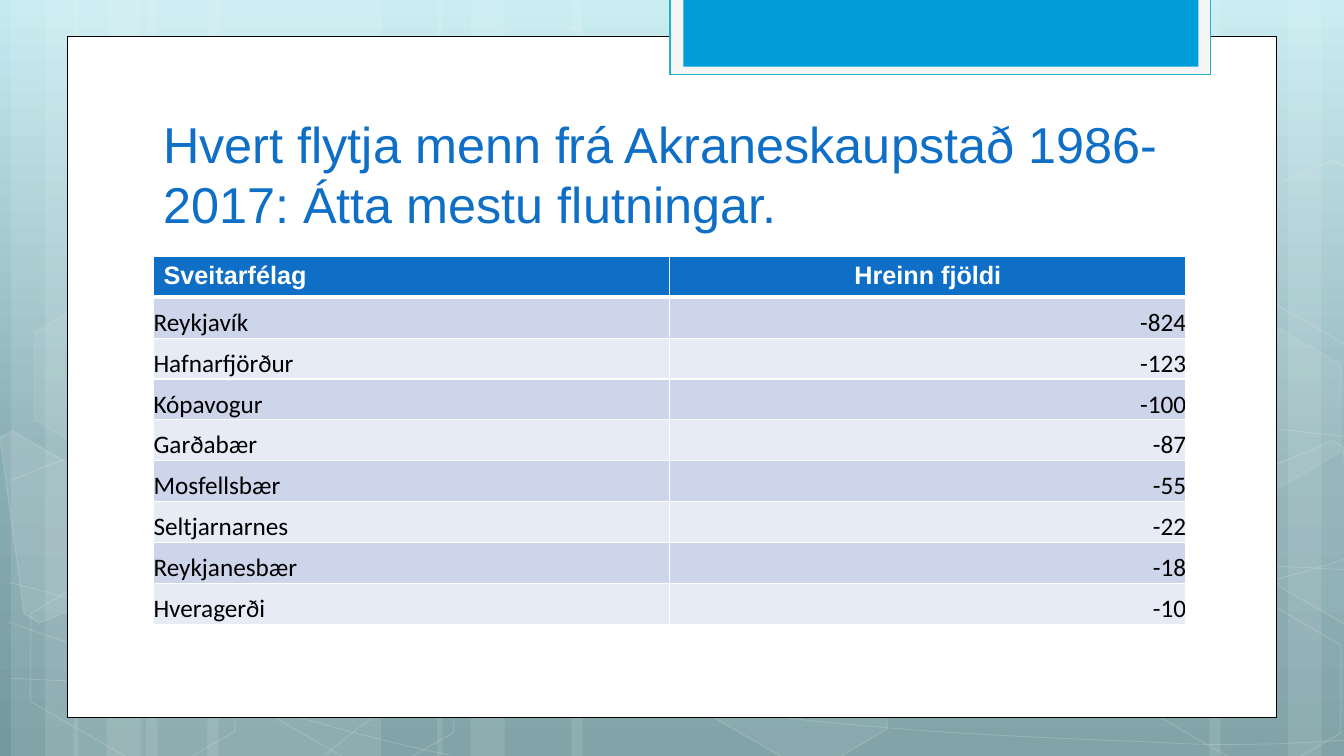
"""Builds a slide with a table of net migration from Akraneskaupstaður."""
from copy import deepcopy

from lxml.etree import SubElement
from pptx import Presentation
from pptx.dml.color import RGBColor
from pptx.enum.shapes import MSO_SHAPE
from pptx.enum.text import MSO_ANCHOR, MSO_AUTO_SIZE, PP_ALIGN
from pptx.oxml.ns import qn
from pptx.util import Cm, Pt

TITLE = "Hvert flytja menn frá Akraneskaupstað 1986-2017: Átta mestu flutningar."
HEADER = ("Sveitarfélag", "Hreinn fjöldi")
ROWS = [
    ("Reykjavík", -824),
    ("Hafnarfjörður", -123),
    ("Kópavogur", -100),
    ("Garðabær", -87),
    ("Mosfellsbær", -55),
    ("Seltjarnarnes", -22),
    ("Reykjanesbær", -18),
    ("Hveragerði", -10),
]
COLORS = {
    "white": "FFFFFF", "black": "000000", "title": "0F6FC6",
    "band_dark": "CCD5EA", "band_light": "E7EBF5",
    "tab": "F5F5F5", "tab_line": "21B2C9", "tab_inner": "009DD9",
}
GRADIENT = [(0, "C4EBF1"), (0.62, "88ADB3"), (1, "749AA0")]
WIDTH, HEIGHT = 33.87, 19.05

STRIPES = [
    (3.68, 5.92), (0.28, 1.7), (1.14, 2.82), (5.23, 5.92), (1.85, 1.7),
    (2.69, 2.82), (24.84, 5.92), (32.46, 1.7), (30.48, 2.82), (14.4, 10.44),
    (11.02, 1.7), (11.86, 2.82),
]
CURVES = [
    [(0.25, 17.09), (1.83, 17.17), (3.66, 17.25), (6.45, 17.22), (8.99, 17.2),
     (12.12, 17.15), (15.49, 16.89), (18.9, 16.64), (23.7, 16.15), (26.8, 15.67),
     (29.92, 15.19), (33.1, 14.43), (34.11, 14)],
    [(0.25, 12.12), (1.22, 11.71), (2.18, 11.33), (4.11, 10.95), (6.05, 10.57),
     (8.76, 10.01), (11.76, 9.83), (14.78, 9.65), (18.42, 9.63), (22.15, 9.83),
     (25.88, 10.03), (32.08, 10.82), (34.11, 11.02)],
    [(0.2, 15.67), (4.29, 17.07), (8.38, 18.47), (11.33, 19.02)],
    [(0.25, 14.68), (1.3, 14.96), (2.36, 15.24), (4.34, 15.65), (6.3, 16.03),
     (9.25, 16.66), (12.07, 17.09), (14.88, 17.53), (18.47, 17.98), (21.26, 18.24),
     (24.08, 18.52), (27.08, 18.62), (28.88, 18.69), (30.66, 18.8), (31.12, 18.75),
     (32, 18.75), (32.87, 18.72), (33.5, 18.67), (34.11, 18.64)],
    [(8.2, 19.02), (8.81, 18.52), (9.4, 18.01), (10.24, 17.55), (11.05, 17.09),
     (12.19, 16.59), (13.13, 16.23), (14.07, 15.88), (14.66, 15.72), (15.9, 15.47),
     (17.15, 15.21), (19.43, 14.86), (20.6, 14.68), (21.79, 14.5), (21.97, 14.5),
     (23.04, 14.45), (24.08, 14.38), (25.73, 14.3), (26.9, 14.27), (28.07, 14.25),
     (30.02, 14.27), (30.02, 14.27), (30.02, 14.27), (32.26, 14.27), (32.26, 14.27),
     (32.89, 14.3), (33.45, 14.33), (33.76, 14.35), (34.06, 14.38), (33.96, 14.35),
     (34.06, 14.38)],
]
HEXAGONS = [
    (11.3, 0.91, 4, 8), (16.81, 14.96, 6, 12), (0.38, 15.01, 0, 12),
    (0.48, 7.92, 7, 8), (5.89, 15.04, 0, 12), (28.24, 15.06, 0, 12),
    (28.24, 7.98, 7, 8),
]
EDGE_HEXAGONS = [
    ([(0, 11.02), (0.33, 10.87), (2.92, 12.37), (3.23, 14.76), (0.99, 15.7),
      (0.61, 15.47)], 10),
    ([(31.37, 12.04), (33.6, 11.1), (33.83, 11.25), (34.47, 15.88),
      (34.26, 15.95), (31.67, 14.45)], 4),
    ([(31.37, 4.98), (33.6, 4.04), (33.88, 4.19), (34.47, 8.79),
      (34.26, 8.89), (31.67, 7.39)], 0),
]
PANELS = [
    ((1.7, 0.91, 30.47, 17.18), dict(fill="white", line="black", width=0.5)),
    ((16.89, -0.05, 13.62, 1.93), dict(fill="tab", line="tab_line", width=1.25)),
    ((17.22, -0.05, 12.98, 1.73), dict(fill="tab_inner")),
]
TITLE_BOX = (3.86, 2.84, 26.01, 3.18)
TABLE_LEFT, TABLE_TOP, COL_W, ROW_H = 3.87, 6.46, 13.01, 1.03


def rgb(name):
    return RGBColor.from_string(COLORS[name])


def set_color(fill, name, alpha, parent):
    fill.solid()
    fill.fore_color.rgb = rgb(name)
    if alpha < 100:
        clr = parent.find(qn("a:solidFill")).find(qn("a:srgbClr"))
        SubElement(clr, qn("a:alpha"), val=str(alpha * 1000))


def paint(sp, fill=None, alpha=100, line=None, width=1, line_alpha=100):
    sp.shadow.inherit = False
    spPr = sp._element.spPr
    if fill and alpha:
        set_color(sp.fill, fill, alpha, spPr)
    else:
        sp.fill.background()
    if line:
        sp.line.width = Pt(width)
        set_color(sp.line.fill, line, line_alpha, spPr.find(qn("a:ln")))
    else:
        sp.line.fill.background()


def add_preset(s, kind, box, **style):
    sp = s.shapes.add_shape(kind, *map(Cm, box))
    paint(sp, **style)
    return sp


def add_outline(s, points, close, **style):
    pts = [(Cm(x), Cm(y)) for x, y in points]
    fb = s.shapes.build_freeform(*pts[0])
    fb.add_line_segments(pts[1:], close=close)
    sp = fb.convert_to_shape()
    paint(sp, **style)
    return sp


def bend(sp):
    outline = next(sp._element.iter(qn("a:pathLst")))[0]
    segments = outline.findall(qn("a:lnTo"))
    for i in range(0, len(segments), 3):
        curve = SubElement(outline, qn("a:cubicBezTo"))
        for segment in segments[i:i + 3]:
            curve.append(segment[0])
            outline.remove(segment)


def write(tf, text, size=18, font="Calibri", color="black", bold=False,
          align=PP_ALIGN.LEFT):
    p = tf.paragraphs[0]
    p.alignment = align
    r = p.add_run()
    r.text = text
    r.font.size, r.font.name, r.font.bold = Pt(size), font, bold
    r.font.color.rgb = rgb(color)


def add_background(s):
    fill = s.background.fill
    fill.gradient()
    fill.gradient_angle = 270
    gs_lst = next(s._element.iter(qn("a:gsLst")))
    gs_lst.append(deepcopy(gs_lst[0]))
    for stop, (pos, color) in zip(fill.gradient_stops, GRADIENT):
        stop.position = pos
        stop.color.rgb = RGBColor.from_string(color)
    for left, width in STRIPES:
        add_preset(s, MSO_SHAPE.RECTANGLE, (left, 0, width, HEIGHT), fill="white", alpha=10)
    for points in CURVES:
        bend(add_outline(s, points, False, line="white", width=0.5, line_alpha=20))
    for left, top, alpha, line_alpha in HEXAGONS:
        sp = add_preset(s, MSO_SHAPE.HEXAGON, (left, top, 5.94, 3.86), fill="white",
                        alpha=alpha, line="white", line_alpha=line_alpha)
        sp.adjustments[0] = 0.285
        sp.rotation = 30
    for points, alpha in EDGE_HEXAGONS:
        add_outline(s, points, True, fill="white", alpha=alpha, line="white", line_alpha=12)
    for box, style in PANELS:
        add_preset(s, MSO_SHAPE.RECTANGLE, box, **style)


def add_title(s):
    title = s.shapes.title
    s.shapes._spTree.append(title._element)
    title.left, title.top, title.width, title.height = map(Cm, TITLE_BOX)
    tf = title.text_frame
    tf.word_wrap, tf.auto_size = True, MSO_AUTO_SIZE.NONE
    tf.vertical_anchor = MSO_ANCHOR.BOTTOM
    write(tf, TITLE, size=36, font="Arial", color="title")


def add_rule_below(cell):
    tcPr = cell._tc.get_or_add_tcPr()
    ln = SubElement(tcPr, qn("a:lnB"), w=str(Pt(3)))
    SubElement(SubElement(ln, qn("a:solidFill")), qn("a:srgbClr"), val=COLORS["white"])
    tcPr.insert(0, ln)


def add_migration_table(s):
    n = len(ROWS) + 1
    table = s.shapes.add_table(n, 2, Cm(TABLE_LEFT), Cm(TABLE_TOP),
                               Cm(2 * COL_W), Cm(n * ROW_H)).table
    for col in table.columns:
        col.width = Cm(COL_W)
    for i, row in enumerate([HEADER] + ROWS):
        table.rows[i].height = Cm(ROW_H)
        for j, value in enumerate(row):
            cell = table.cell(i, j)
            cell.fill.solid()
            if i == 0:
                cell.fill.fore_color.rgb = rgb("title")
                add_rule_below(cell)
                write(cell.text_frame, value, font="Arial", color="white", bold=True,
                      align=(PP_ALIGN.LEFT, PP_ALIGN.CENTER)[j])
                continue
            cell.fill.fore_color.rgb = rgb("band_dark" if i % 2 else "band_light")
            cell.margin_left = cell.margin_right = cell.margin_top = cell.margin_bottom = 0
            cell.vertical_anchor = MSO_ANCHOR.BOTTOM
            write(cell.text_frame, str(value), align=(PP_ALIGN.LEFT, PP_ALIGN.RIGHT)[j])


def main():
    prs = Presentation()
    prs.slide_width, prs.slide_height = Cm(WIDTH), Cm(HEIGHT)
    s = prs.slides.add_slide(prs.slide_layouts[5])
    add_background(s)
    add_title(s)
    add_migration_table(s)
    prs.save("out.pptx")


if __name__ == "__main__":
    main()
